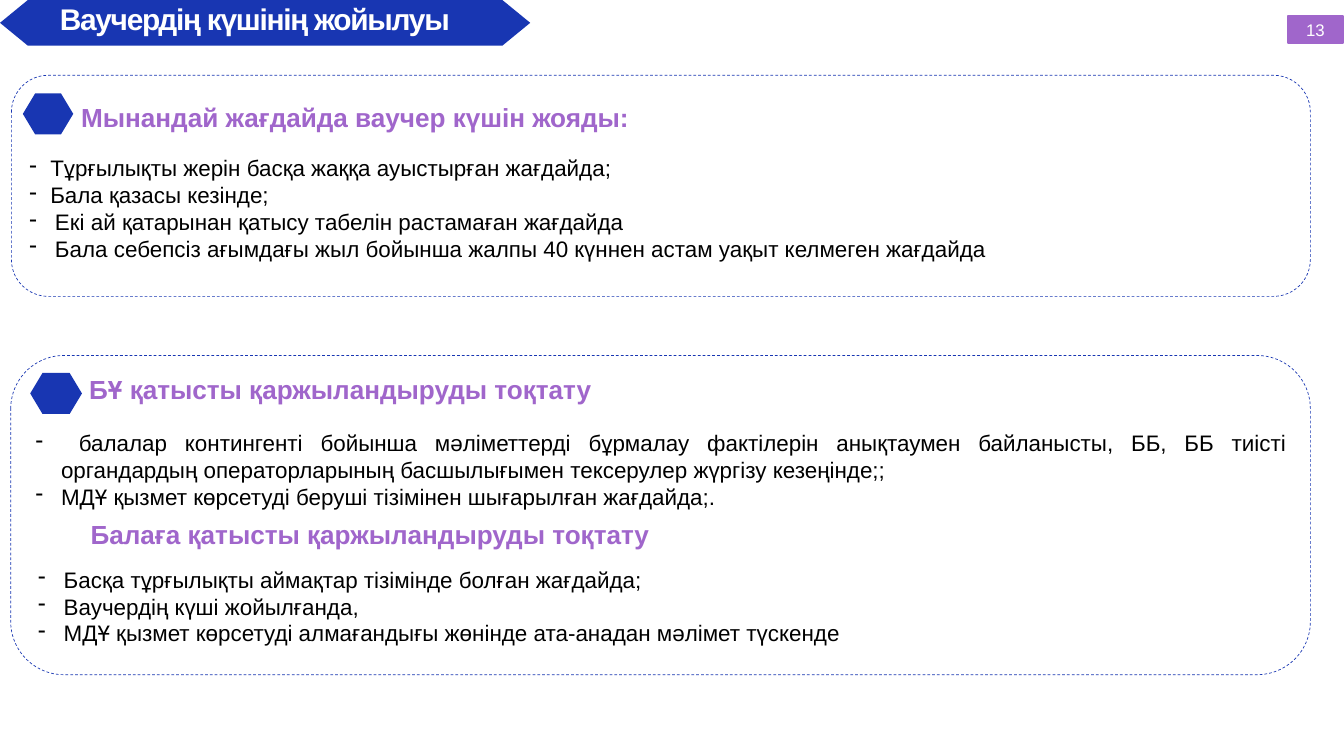
from pptx import Presentation
from pptx.dml.color import RGBColor
from pptx.enum.dml import MSO_LINE
from pptx.enum.shapes import MSO_SHAPE as Shape
from pptx.enum.text import MSO_ANCHOR as Anchor, PP_ALIGN as Align
from pptx.oxml.ns import qn
from pptx.util import Inches, Pt
from lxml.etree import SubElement

BLUE, PURPLE, WHITE, BLACK = "1836B2", "A066CB", "FFFFFF", "000000"

TITLE = {"size": Pt(32), "bold": True}
HEADING = {"size": Pt(28), "bold": True}
BODY = {"size": Pt(24)}
NUMBER = {"size": Pt(18)}

PANELS = [(0.17, 1.12, 19.33, 3.29), (0.16, 5.29, 19.34, 4.75)]

HEXAGONS = [
    ((0, 0, 7.89, 0.68), 0.61),
    ((0.34, 1.39, 0.75, 0.61), 0.3),
    ((0.45, 5.55, 0.77, 0.61), 0.3),
]

HEADINGS = [
    ((1.11, 1.46, 8.45, 0.57), "Мынандай жағдайда ваучер күшін жояды:"),
    ((1.23, 5.5, 7.76, 0.57), "БҰ қатысты қаржыландыруды тоқтату"),
    ((1.25, 7.67, 8.61, 0.57), "Балаға қатысты қаржыландыруды тоқтату"),
]

LISTS = [
    ((0.34, 2.25, 19.16, 1.72), Align.LEFT, [
        (0.31, "Тұрғылықты жерін басқа жаққа ауыстырған жағдайда;"),
        (0.31, "Бала қазасы кезінде;"),
        (0.38, "Екі ай қатарынан қатысу табелін растамаған жағдайда"),
        (0.38, "Бала себепсіз ағымдағы жыл бойынша жалпы 40 күннен астам уақыт келмеген жағдайда"),
    ]),
    ((0.43, 6.34, 18.81, 1.31), Align.JUSTIFY, [
        (0.38, " балалар контингенті бойынша мәліметтерді бұрмалау фактілерін анықтаумен "
               "байланысты, ББ, ББ тиісті органдардың операторларының басшылығымен "
               "тексерулер жүргізу кезеңінде;;"),
        (0.38, "МДҰ қызмет көрсетуді беруші тізімінен шығарылған жағдайда;."),
    ]),
    ((0.47, 8.37, 18.57, 1.31), Align.LEFT, [
        (0.38, "Басқа тұрғылықты аймақтар тізімінде болған жағдайда;"),
        (0.38, "Ваучердің күші жойылғанда,"),
        (0.38, "МДҰ қызмет көрсетуді алмағандығы жөнінде ата-анадан мәлімет түскенде"),
    ]),
]


def color(value):
    return RGBColor.from_string(value)


def place(frame):
    return [Inches(length) for length in frame]


def add_block(page, kind, frame, fill=None, line=None, width=0.75):
    block = page.shapes.add_shape(kind, *place(frame))
    block.shadow.inherit = False
    if fill:
        block.fill.solid()
        block.fill.fore_color.rgb = color(fill)
    else:
        block.fill.background()
    if line:
        block.line.color.rgb = color(line)
        block.line.width = Pt(width)
    else:
        block.line.fill.background()
    return block


def write(para, text, style, ink):
    span = para.add_run()
    span.text = text
    for name, value in {"name": "Arial", **style}.items():
        setattr(span.font, name, value)
    span.font.color.rgb = color(ink)
    return span


def add_box(page, frame, wrap=True):
    box = page.shapes.add_textbox(*place(frame))
    box.text_frame.word_wrap = wrap
    return box.text_frame


def add_dash(para, indent):
    settings = para._p.get_or_add_pPr()
    settings.set("marL", str(Inches(indent)))
    settings.set("indent", str(-Inches(indent)))
    SubElement(settings, qn("a:buChar")).set("char", "-")


def add_list(page, frame, align, items):
    text = add_box(page, frame)
    for index, (indent, item) in enumerate(items):
        para = text.add_paragraph() if index else text.paragraphs[0]
        para.alignment = align
        add_dash(para, indent)
        write(para, item, BODY, BLACK)


def add_title(page):
    text = add_box(page, (0.89, 0.01, 7.17, 0.54))
    for side in ("left", "top", "right", "bottom"):
        setattr(text, f"margin_{side}", 0)
    span = write(text.paragraphs[0], "Ваучердің күшінің жойылуы", TITLE, WHITE)
    span.font._element.set("spc", "-140")


def add_page_number(page):
    badge = add_block(page, Shape.RECTANGLE, (19.17, 0.24, 0.81, 0.4), PURPLE, PURPLE, 2)
    badge.text_frame.vertical_anchor = Anchor.MIDDLE
    para = badge.text_frame.paragraphs[0]
    para.alignment = Align.CENTER
    write(para, "13", NUMBER, WHITE)


def main():
    deck = Presentation()
    deck.slide_width, deck.slide_height = Inches(20), Inches(11.25)
    page = deck.slides.add_slide(deck.slide_layouts[6])
    for frame in PANELS:
        panel = add_block(page, Shape.ROUNDED_RECTANGLE, frame, line=BLUE)
        panel.line.dash_style = MSO_LINE.DASH
    for frame, slant in HEXAGONS:
        hexagon = add_block(page, Shape.HEXAGON, frame, BLUE)
        hexagon.adjustments[0] = slant
    add_title(page)
    for frame, heading in HEADINGS:
        text = add_box(page, frame, wrap=False)
        write(text.paragraphs[0], heading, HEADING, PURPLE)
    for frame, align, items in LISTS:
        add_list(page, frame, align, items)
    add_page_number(page)
    deck.save("out.pptx")


if __name__ == "__main__":
    main()
